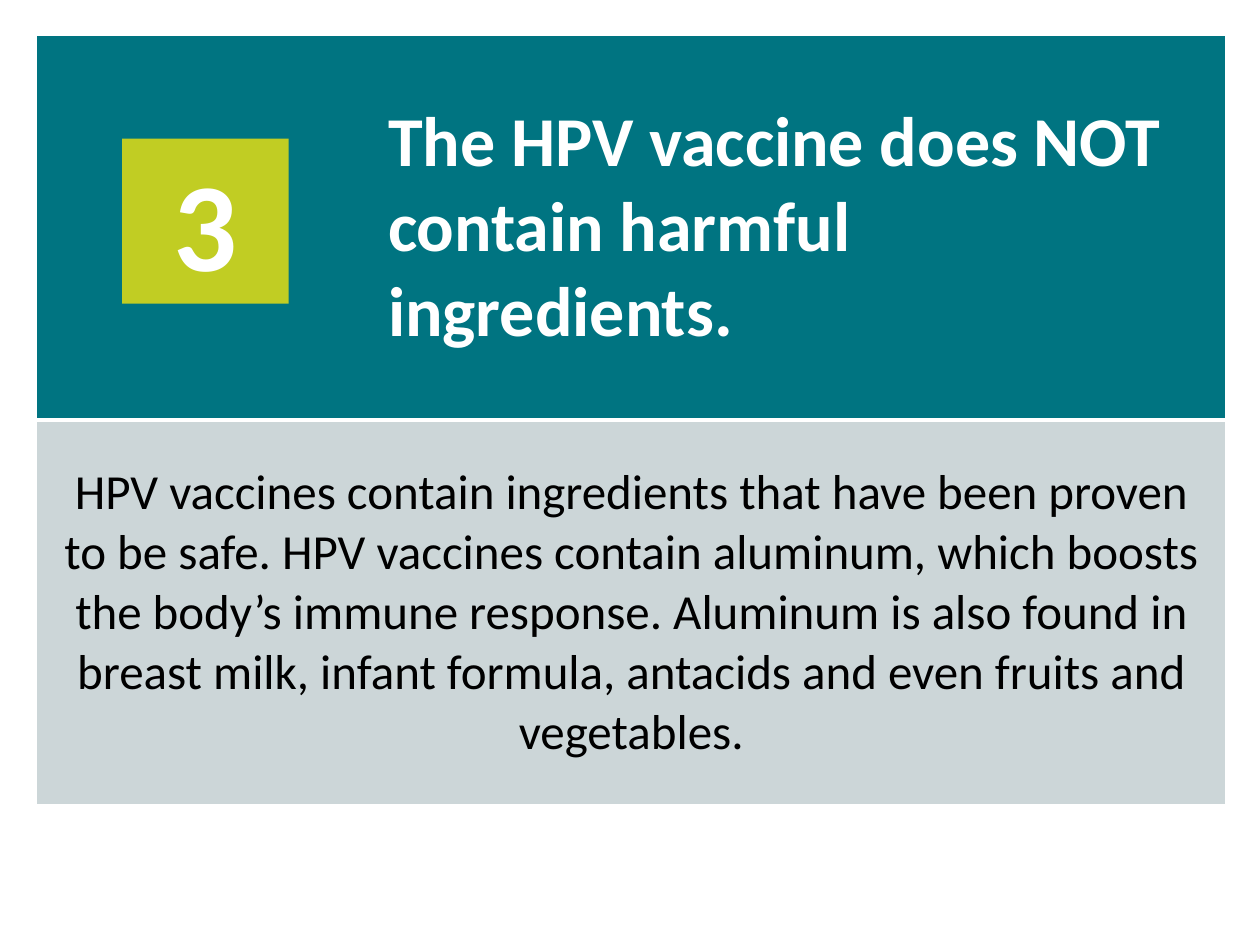
from lxml.etree import SubElement
from pptx import Presentation
from pptx.dml.color import RGBColor
from pptx.enum.shapes import MSO_SHAPE as SHAPE
from pptx.enum.text import MSO_ANCHOR as ANCHOR, PP_ALIGN as ALIGN
from pptx.oxml.ns import qn
from pptx.util import Inches, Pt

FONT = "Calibri"
COLORS = {"teal": "007481", "gray": "CCD6D8", "lime": "C1CD23",
          "white": "FFFFFF", "black": "000000"}


def rgb(name):
    """Return the named palette colour."""
    return RGBColor.from_string(COLORS[name])


def write(tf, text, size, color, bold=False, align=ALIGN.LEFT):
    """Write one run of text into a frame."""
    p = tf.paragraphs[0]
    p.alignment = align
    r = p.add_run()
    r.text = text
    r.font.name, r.font.size, r.font.bold = FONT, Pt(size), bold
    r.font.color.rgb = rgb(color)


def style_cell(cell, fill, left=0, right=0, top=0, bottom=0):
    """Set white borders by width in points, then the margins and fill."""
    tcPr = cell._tc.get_or_add_tcPr()
    for side, width in zip("LRTB", (left, right, top, bottom)):
        ln = SubElement(tcPr, qn(f"a:ln{side}"), w=str(Pt(width)))
        if width:
            solid = SubElement(ln, qn("a:solidFill"))
            SubElement(solid, qn("a:srgbClr"), val=COLORS["white"])
        else:
            SubElement(ln, qn("a:noFill"))
    cell.margin_left = cell.margin_right = Inches(0.15)
    cell.margin_top = cell.margin_bottom = Inches(0.15)
    cell.vertical_anchor = ANCHOR.MIDDLE
    cell.fill.solid()
    cell.fill.fore_color.rgb = rgb(fill)


def add_fact_table(s, x, y, w, h, number_w, title, body):
    """Place a heading row with room for a number above a merged body row."""
    table = s.shapes.add_table(2, 2, Inches(x), Inches(y), Inches(w), Inches(h)).table
    table.columns[0].width = Inches(number_w)
    table.columns[1].width = Inches(w - number_w)
    number, heading = table.cell(0, 0), table.cell(0, 1)
    detail, spanned = table.cell(1, 0), table.cell(1, 1)
    detail.merge(spanned)
    style_cell(number, "teal", left=1, top=1, bottom=3)
    style_cell(heading, "teal", right=1, top=1, bottom=3)
    for cell in (detail, spanned):
        style_cell(cell, "gray", left=1, right=1, top=3, bottom=1)
    write(heading.text_frame, title, 40, "white", bold=True)
    write(detail.text_frame, body, 28, "black", align=ALIGN.CENTER)


def add_number(s, x, y, w, h, text):
    """Place a filled box with a large number."""
    sp = s.shapes.add_shape(SHAPE.RECTANGLE, Inches(x), Inches(y), Inches(w), Inches(h))
    sp.shadow.inherit = False
    sp.fill.solid()
    sp.fill.fore_color.rgb = rgb("lime")
    sp.line.fill.background()
    sp.text_frame.vertical_anchor = ANCHOR.MIDDLE
    write(sp.text_frame, text, 72, "white", bold=True, align=ALIGN.CENTER)


def add_fact(s, x, y, w, h, number, title, body):
    """Place a numbered fact in the given box."""
    add_fact_table(s, x, y, w, h, 2.64, title, body)
    add_number(s, x + 0.68, y + 0.82, 1.32, 1.31, number)


def main():
    """Build and save the slide."""
    prs = Presentation()
    prs.slide_width, prs.slide_height = Inches(10), Inches(7.5)
    s = prs.slides.add_slide(prs.slide_layouts[6])
    add_fact(
        s, 0.29, 0.28, 9.44, 6.11, "3",
        "The HPV vaccine does NOT contain harmful ingredients.",
        "HPV vaccines contain ingredients that have been proven to be safe. "
        "HPV vaccines contain aluminum, which boosts the body’s immune response. "
        "Aluminum is also found in breast milk, infant formula, antacids and "
        "even fruits and vegetables.")
    prs.save("out.pptx")


if __name__ == "__main__":
    main()
